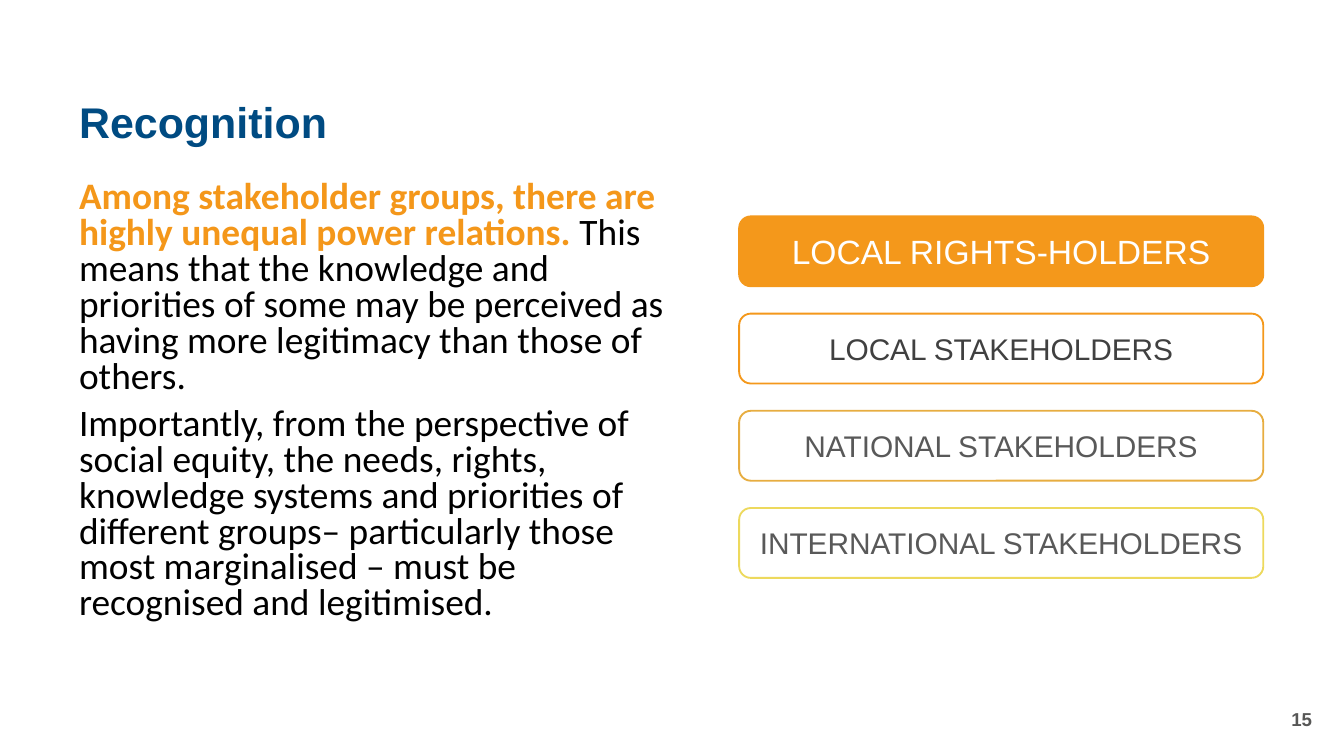
from pptx import Presentation
from pptx.dml.color import RGBColor
from pptx.enum.shapes import MSO_SHAPE as SHAPE
from pptx.enum.text import MSO_ANCHOR as ANCHOR, PP_ALIGN as ALIGN
from pptx.util import Inches, Pt

ORANGE = "F4981B"


def rgb(value):
    return RGBColor.from_string(value)


class SlideBuilder:
    def __init__(self, s, font="Arial"):
        self.s = s
        self.font = font

    def style(self, p, size, color, bold=False, font=None):
        p.font.name = font or self.font
        p.font.size = Pt(size)
        p.font.bold = bold
        p.font.color.rgb = rgb(color)

    def textbox(self, box, anchor=ANCHOR.MIDDLE):
        tf = self.s.shapes.add_textbox(*map(Inches, box)).text_frame
        tf.word_wrap = True
        tf.vertical_anchor = anchor
        return tf

    def label(self, box, text, size, color, align=ALIGN.LEFT, spacing=None):
        p = self.textbox(box).paragraphs[0]
        p.text = text
        p.alignment = align
        p.line_spacing = spacing
        self.style(p, size, color, bold=True)

    def body(self, box, paragraphs, size=20):
        """Add paragraphs, each a list of (text, highlighted) runs."""
        tf = self.textbox(box, ANCHOR.TOP)
        for i, runs in enumerate(paragraphs):
            p = tf.add_paragraph() if i else tf.paragraphs[0]
            p.line_spacing = 0.8
            if i:
                p.space_before = Pt(6)
            self.style(p, size, "000000", font="Calibri")
            for text, highlighted in runs:
                r = p.add_run()
                r.text = text
                if highlighted:
                    r.font.bold = True
                    r.font.color.rgb = rgb("F4971A")

    def group_box(self, box, text, size, color, line, fill=None):
        sp = self.s.shapes.add_shape(SHAPE.ROUNDED_RECTANGLE, *map(Inches, box))
        sp.shadow.inherit = False
        if fill:
            sp.fill.solid()
            sp.fill.fore_color.rgb = rgb(fill)
        else:
            sp.fill.background()
        sp.line.color.rgb = rgb(line)
        sp.line.width = Pt(1)
        tf = sp.text_frame
        tf.word_wrap = True
        tf.vertical_anchor = ANCHOR.MIDDLE
        p = tf.paragraphs[0]
        p.text = text
        p.alignment = ALIGN.CENTER
        self.style(p, size, color)


def main():
    prs = Presentation()
    prs.slide_width = Inches(10)
    prs.slide_height = prs.slide_width * 9 // 16
    slide = SlideBuilder(prs.slides.add_slide(prs.slide_layouts[6]))

    slide.body((0.49, 1.3, 4.66, 3.7), [
        [("Among stakeholder groups, there are highly unequal power relations.", True),
         (" This means that the knowledge and priorities of some may be perceived "
          "as having more legitimacy than those of others.", False)],
        [("Importantly, from the perspective of social equity, the needs, rights, "
          "knowledge systems and priorities of different groups– particularly those "
          "most marginalised – must be recognised and legitimised.", False)],
    ])
    slide.label((7.61, 5.2, 2.25, 0.3), "15", 10, "575756", ALIGN.RIGHT)
    slide.label((0.49, 0.63, 9.37, 0.59), "Recognition", 23, "004B82", spacing=0.9)

    groups = [
        ("LOCAL RIGHTS-HOLDERS", 18, "FFFFFF", ORANGE, ORANGE),
        ("LOCAL STAKEHOLDERS", 16, "404040", ORANGE),
        ("NATIONAL STAKEHOLDERS", 16, "595959", "E7AD40"),
        ("INTERNATIONAL STAKEHOLDERS", 16, "595959", "EDD95D"),
    ]
    top, last_top = 1.61, 3.78
    pitch = (last_top - top) / (len(groups) - 1)
    for i, group in enumerate(groups):
        slide.group_box((5.5, top + i * pitch, 3.9, 0.52), *group)

    prs.save("out.pptx")


if __name__ == "__main__":
    main()
